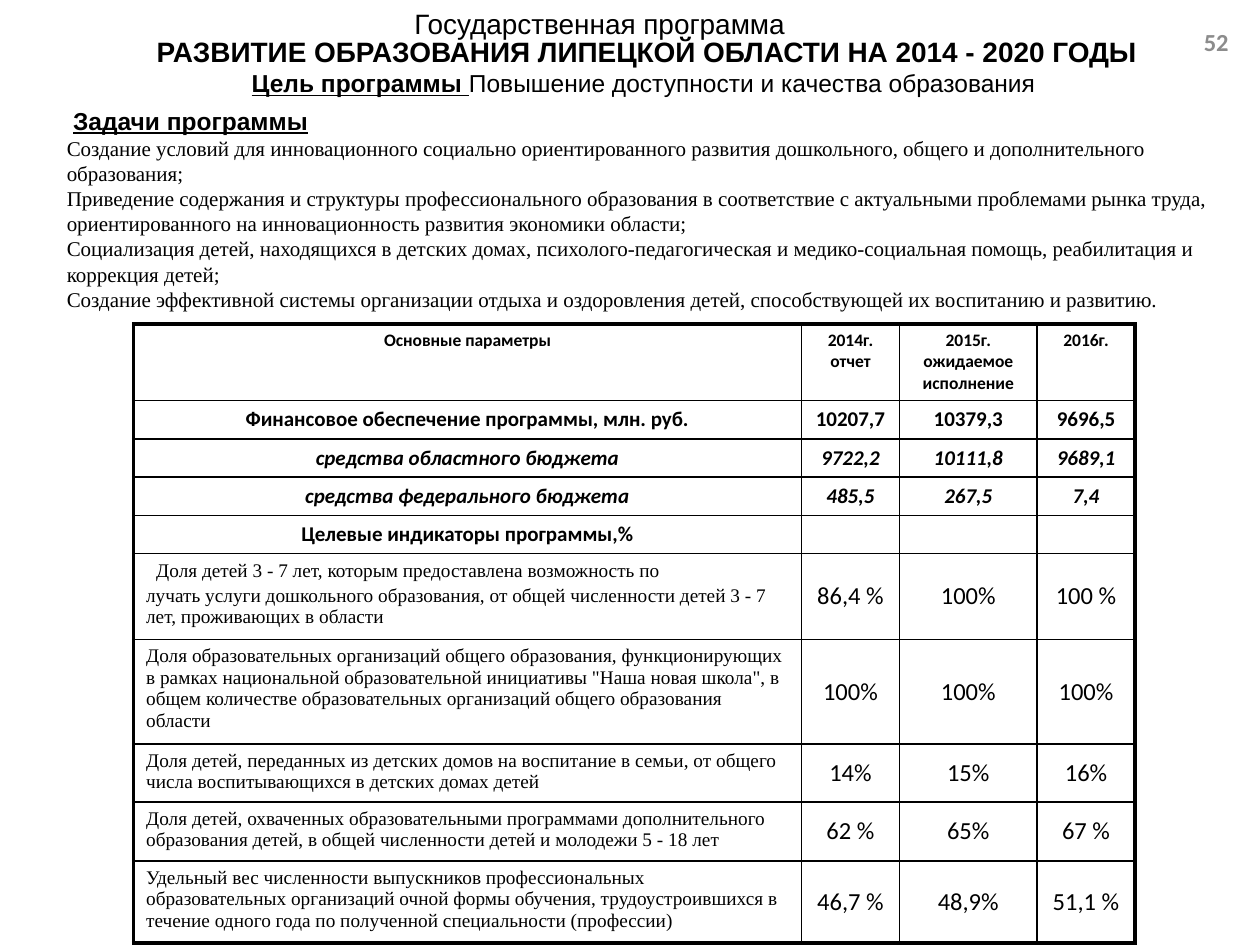
from lxml import etree
from pptx import Presentation
from pptx import util as u
from pptx.dml.color import RGBColor
from pptx.enum import text
from pptx.oxml.ns import qn

COLORS = {"ink": "000000", "paper": "FFFFFF", "number": "8C8C8C"}
LEFT, CENTER, RIGHT = (text.PP_ALIGN.LEFT, text.PP_ALIGN.CENTER,
                       text.PP_ALIGN.RIGHT)
TOP, MIDDLE = text.MSO_ANCHOR.TOP, text.MSO_ANCHOR.MIDDLE
THIN, THICK = 1, 2.25

HEADING = dict(name="Arial", size=16, bold=False)
GOAL = dict(name="Arial", size=14, bold=False)
LABEL = dict(GOAL, bold=True, underline=True)
TASK = dict(name="Times New Roman", size=12, bold=False)
NUMBER = dict(name="Calibri", size=14, bold=True, color="number")
HEADER = dict(name="Calibri", size=10, bold=True)
FUNDING = dict(HEADER, size=12)
SOURCE = dict(FUNDING, italic=True)
INDICATOR = dict(name="Times New Roman", size=11, bold=False)
VALUE = dict(name="Calibri", size=14, bold=False)

TASKS = [
    "Создание условий для инновационного социально ориентированного развития дошкольного, общего и дополнительного образования;",
    "Приведение содержания и структуры профессионального образования в соответствие с актуальными проблемами рынка труда, ориентированного на инновационность развития экономики области;",
    "Социализация детей, находящихся в детских домах, психолого-педагогическая и медико-социальная помощь, реабилитация и коррекция детей;",
    "Создание эффективной системы организации отдыха и оздоровления детей, способствующей их воспитанию и развитию.",
]

# Row height, format of the whole row, cell texts
SUMMARY = [
    (0.61, HEADER, ["Основные параметры", "2014г. отчет",
                    "2015г. ожидаемое исполнение", "2016г."]),
    (0.3, FUNDING, ["Финансовое обеспечение программы, млн. руб.",
                    "10207,7", "10379,3", "9696,5"]),
    (0.3, SOURCE, ["средства областного бюджета",
                   "9722,2", "10111,8", "9689,1"]),
    (0.3, SOURCE, ["средства федерального бюджета",
                   "485,5", "267,5", "7,4"]),
    (0.3, FUNDING, ["Целевые индикаторы программы,%", "", "", ""]),
]
INDICATORS = [
    (0.68, INDICATOR, [
        "Доля детей 3 - 7 лет, которым предоставлена возможность по\n"
        "лучать услуги дошкольного образования, от общей численности детей 3 - 7 лет, проживающих в области",
        "86,4 %", "100%", "100 %"]),
    (0.83, INDICATOR, [
        "Доля образовательных организаций общего образования, функционирующих в рамках национальной образовательной инициативы \"Наша новая школа\", в общем количестве образовательных организаций общего образования области",
        "100%", "100%", "100%"]),
    (0.46, INDICATOR, [
        "Доля детей, переданных из детских домов на воспитание в семьи, от общего числа воспитывающихся в детских домах детей",
        "14%", "15%", "16%"]),
    (0.47, INDICATOR, [
        "Доля детей, охваченных образовательными программами дополнительного образования детей, в общей численности детей и молодежи 5 - 18 лет",
        "62 %", "65%", "67 %"]),
    (0.65, INDICATOR, [
        "Удельный вес численности выпускников профессиональных образовательных организаций очной формы обучения, трудоустроившихся в течение одного года по полученной специальности (профессии)",
        "46,7 %", "48,9%", "51,1 %"]),
]


class SlideBuilder:
    def __init__(self, prs):
        self.slide = prs.slides.add_slide(prs.slide_layouts[1])

    def run(self, p, words, style):
        r = p.add_run()
        r.text = words
        for key, value in style.items():
            if key == "size":
                value = u.Pt(value)
            if key != "color":
                setattr(r.font, key, value)
        color = COLORS[style.get("color", "ink")]
        r.font.color.rgb = RGBColor.from_string(color)

    def fill_text(self, tf, paragraphs, align=LEFT, indent=0, space=0):
        """Write paragraphs of (words, style) runs; indent the first line."""
        for i, runs in enumerate(paragraphs):
            p = tf.add_paragraph() if i else tf.paragraphs[0]
            pPr = p._p.get_or_add_pPr()
            pPr.set("marL", "0")
            pPr.set("indent", str(0 if i else u.Inches(indent)))
            etree.SubElement(pPr, qn("a:buNone"))
            p.alignment = align
            p.space_before = u.Pt(space if i else 0)
            for words, style in runs:
                if words:
                    self.run(p, words, style)
                else:
                    etree.SubElement(p._p, qn("a:endParaRPr"),
                                     sz=str(style["size"] * 100))

    def frame(self, sp, at, paragraphs, anchor, **layout):
        sp.left, sp.top, sp.width, sp.height = map(u.Inches, at)
        tf = sp.text_frame
        settings = dict(word_wrap=True, vertical_anchor=anchor,
                        auto_size=text.MSO_AUTO_SIZE.NONE)
        for key, value in settings.items():
            setattr(tf, key, value)
        self.fill_text(tf, paragraphs, **layout)

    def placeholder(self, idx, at, paragraphs, **layout):
        self.frame(self.slide.placeholders[idx], at, paragraphs, MIDDLE,
                   **layout)

    def text_box(self, at, paragraphs, anchor=TOP, **layout):
        sp = self.slide.shapes.add_textbox(*map(u.Inches, at))
        self.frame(sp, at, paragraphs, anchor, **layout)

    def borders(self, cell, widths):
        tcPr = cell._tc.get_or_add_tcPr()
        for side, width in zip("LRTB", widths):
            ln = etree.SubElement(tcPr, qn(f"a:ln{side}"),
                                  w=str(u.Pt(width)))
            fill = etree.SubElement(ln, qn("a:solidFill"))
            etree.SubElement(fill, qn("a:srgbClr"), val=COLORS["ink"])

    def table(self, left, top, widths, rows):
        heights = [height for height, _, _ in rows]
        size = (left, top, sum(widths), sum(heights))
        table = self.slide.shapes.add_table(
            len(rows), len(widths), *map(u.Inches, size)).table
        table.first_row = table.horz_banding = False
        for column, width in zip(table.columns, widths):
            column.width = u.Inches(width)
        last_row, last_col = len(rows) - 1, len(widths) - 1
        for i, (height, style, words) in enumerate(rows):
            table.rows[i].height = u.Inches(height)
            for j, content in enumerate(words):
                cell = table.cell(i, j)
                edges = (j == 0, j == last_col, i == 0, i == last_row)
                self.borders(cell, [THICK if e else THIN for e in edges])
                cell.fill.solid()
                cell.fill.fore_color.rgb = RGBColor.from_string(
                    COLORS["paper"])
                self.cell_text(cell, content, style, j)

    def cell_text(self, cell, content, style, j):
        align = CENTER
        if style is INDICATOR:
            if j:
                style = VALUE
                cell.vertical_anchor = MIDDLE
            else:
                align = LEFT
        lines = content.split("\n")
        self.fill_text(cell.text_frame, [[(line, style)] for line in lines],
                       align=align, indent=0.08 if len(lines) > 1 else 0,
                       space=2.2)


def main():
    prs = Presentation()
    prs.slide_width, prs.slide_height = u.Inches(10), u.Inches(7.5)
    s = SlideBuilder(prs)
    s.text_box((3.19, 0, 3.3, 0.4), [[("Государственная программа", HEADING)]])
    s.placeholder(0, (0.27, 0.22, 9.73, 0.61), [
        [("РАЗВИТИЕ ОБРАЗОВАНИЯ ЛИПЕЦКОЙ ОБЛАСТИ НА 2014 - 2020 ГОДЫ",
          dict(HEADING, bold=True))],
        [("Цель программы", LABEL), (" ", dict(LABEL, bold=False)),
         ("Повышение доступности и качества образования ", GOAL)],
    ], align=CENTER)
    s.table(1.06, 2.57, [5.3, 0.78, 1.09, 0.78], SUMMARY + INDICATORS)
    s.placeholder(1, (0.43, 0.78, 9.57, 1.75),
                  [[("Задачи программы", LABEL)]]
                  + [[(task, TASK)] for task in TASKS], indent=0.05)
    s.text_box((9.17, 0.13, 0.68, 0.4), [[("52", NUMBER)]], anchor=MIDDLE,
               align=RIGHT)
    prs.save("out.pptx")


if __name__ == "__main__":
    main()
